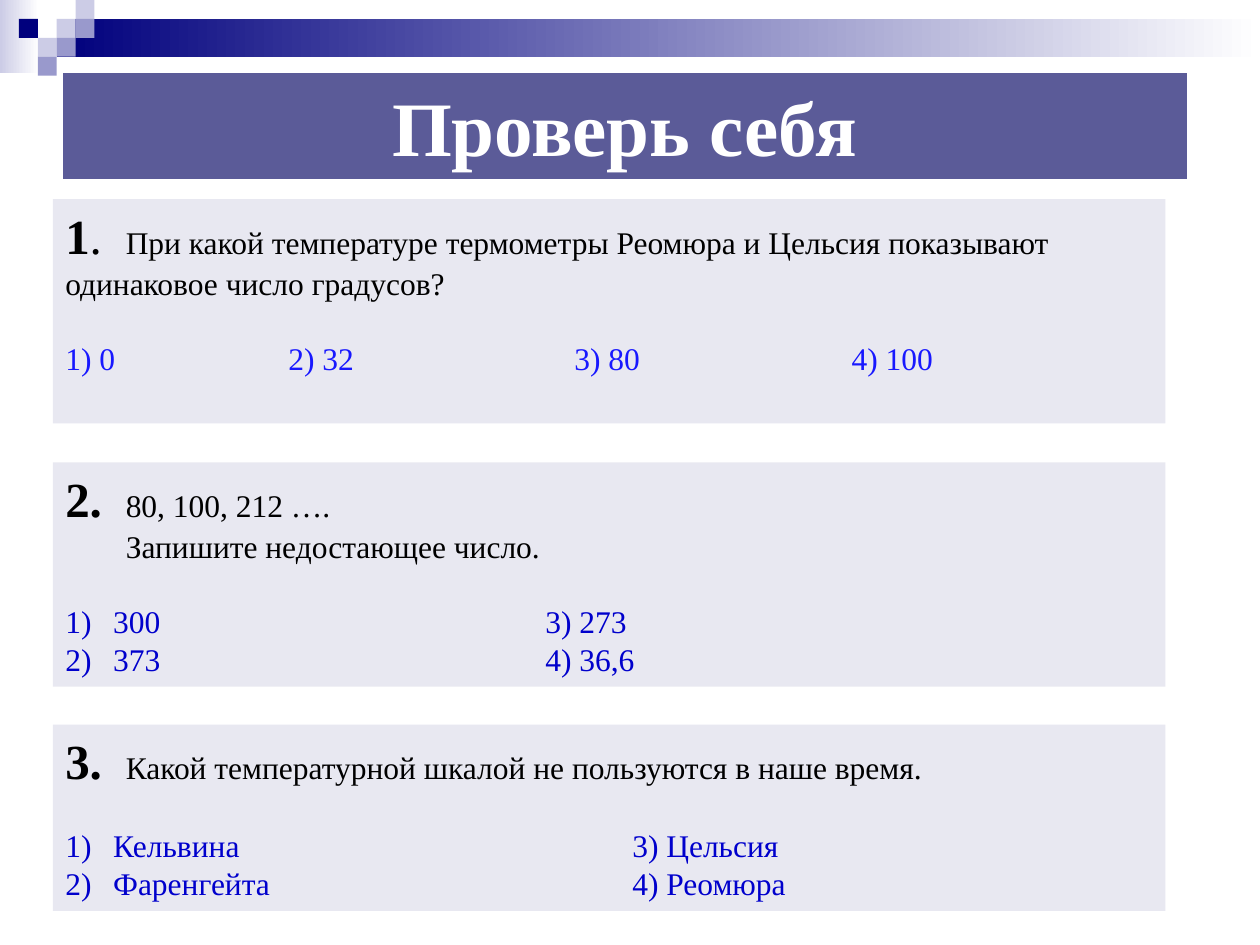
from lxml.etree import SubElement
from pptx import Presentation
from pptx.dml.color import RGBColor as RGB
from pptx.enum.shapes import MSO_SHAPE as Shape
from pptx.enum.text import MSO_ANCHOR as Anchor, PP_ALIGN as Align
from pptx.oxml.ns import qn
from pptx.util import Inches, Pt

NAVY = RGB(0x00, 0x00, 0x7D)
LILAC = RGB(0x99, 0x99, 0xCC)
PALE = RGB(0xCC, 0xCC, 0xE6)
PANEL = RGB(0xE8, 0xE8, 0xF1)
BANNER = RGB(0x5B, 0x5B, 0x98)
WHITE = RGB(0xFF, 0xFF, 0xFF)
BLACK = RGB(0x00, 0x00, 0x00)
BLUE = RGB(0x00, 0x00, 0xCC)
BRIGHT = RGB(0x18, 0x18, 0xFF)
GAP = 21  # points between a question and its answers
HANG = 0.38
LEAD = 0.48


def write(para, text, size=18, color=BLACK, bold=False, font="Times New Roman"):
    run = para.add_run()
    run.text = text
    run.font.name = font
    run.font.size = Pt(size)
    run.font.bold = bold
    run.font.color.rgb = color


def layout(para, tabs=(), numbered=False):
    """Set tab stops and, if asked, automatic 1) 2) numbering."""
    props = para._p.get_or_add_pPr()
    if numbered:
        props.set("marL", str(Inches(HANG)))
        props.set("indent", str(-Inches(HANG)))
        SubElement(props, qn("a:buFontTx"))
        SubElement(props, qn("a:buAutoNum"), type="arabicParenR")
    stops = SubElement(props, qn("a:tabLst"))
    for tab in tabs:
        SubElement(stops, qn("a:tab"), pos=str(Inches(tab)), algn="l")


class Deck:
    def __init__(self):
        self.prs = Presentation()
        self.prs.slide_width, self.prs.slide_height = Inches(10), Inches(7.5)
        self.slide = self.prs.slides.add_slide(self.prs.slide_layouts[5])

    def rect(self, x, y, w, h, fill, fade=False):
        box = self.slide.shapes.add_shape(
            Shape.RECTANGLE, Inches(x), Inches(y), Inches(w), Inches(h))
        box.shadow.inherit = False
        box.line.fill.background()
        if fade:
            box.fill.gradient()
            box.fill.gradient_angle = 0
            for stop, color in zip(box.fill.gradient_stops, (fill, WHITE)):
                stop.color.rgb = color
        else:
            box.fill.solid()
            box.fill.fore_color.rgb = fill
        return box

    def title(self, text):
        box = self.slide.shapes.title
        box.left, box.top = Inches(0.5), Inches(0.58)
        box.width, box.height = Inches(8.92), Inches(0.84)
        box.fill.solid()
        box.fill.fore_color.rgb = BANNER
        box.text_frame.vertical_anchor = Anchor.MIDDLE
        para = box.text_frame.paragraphs[0]
        para.alignment = Align.CENTER
        write(para, text, size=44, color=WHITE, bold=True)

    def quiz(self, y, h, num, asks, answers, tabs, color=BLUE, numbered=True):
        """Draw a panel with a question and rows of answers set at tab stops."""
        frame = self.rect(0.42, y, 8.83, h, PANEL).text_frame
        frame.word_wrap = True
        frame.vertical_anchor = Anchor.TOP
        para = frame.paragraphs[0]
        write(para, num, size=28, bold=True)
        write(para, ".", size=28, bold=numbered)
        for i, ask in enumerate(asks):
            if i:
                para = frame.add_paragraph()
            para.alignment = Align.LEFT
            layout(para, [LEAD])
            write(para, "\t" + ask)
        for i, row in enumerate(answers):
            para = frame.add_paragraph()
            para.alignment = Align.LEFT
            para.space_before = Pt(0 if i else GAP)
            layout(para, tabs, numbered)
            write(para, "\t".join(row), color=color)


def main():
    deck = Deck()
    deck.rect(0, 0, 0.31, 0.58, PALE, fade=True)
    deck.rect(0.45, 0.15, 9.55, 0.3, NAVY, fade=True)
    for col, row, color in [(3, 1, PALE), (4, 0, PALE), (4, 1, LILAC), (2, 2, PALE),
                            (1, 1, NAVY), (3, 2, LILAC), (2, 3, LILAC)]:
        deck.rect(col * 0.15, row * 0.15, 0.15, 0.15, color)

    deck.title("Проверь себя")
    deck.quiz(1.58, 1.78, "1",
              ["При какой температуре термометры Реомюра и Цельсия показывают "
               "одинаковое число градусов?"],
              [["1) 0", "2) 32", "3) 80", "4) 100"]],
              [1.77, 4.04, 6.24], color=BRIGHT, numbered=False)
    deck.quiz(3.67, 1.78, "2", ["80, 100, 212 ….", "Запишите недостающее число."],
              [["300", "3) 273"], ["373", "4) 36,6"]], [3.81])
    deck.quiz(5.75, 1.48, "3",
              ["Какой температурной шкалой не пользуются в наше время."],
              [["Кельвина", "3) Цельсия"], ["Фаренгейта", "4) Реомюра"]], [4.5])
    deck.prs.save("out.pptx")


if __name__ == "__main__":
    main()
